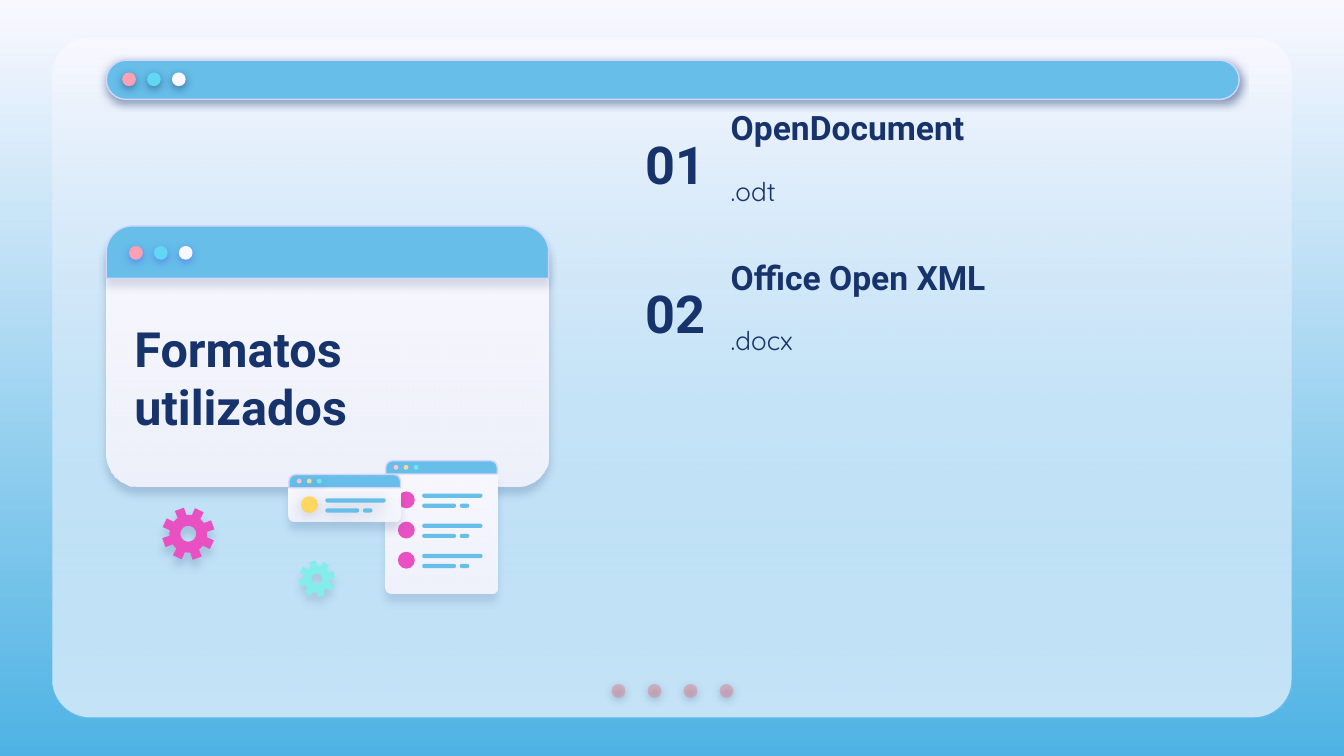
"""Build the slide on the file formats in use, with its window and gear drawings."""
import math

from pptx import Presentation, util as u
from pptx.dml import color
from pptx.enum import shapes, text
from pptx.oxml import ns, xmlchemy
from lxml import etree

NAVY, SKY, MIST, LILAC = "17336B", "66BEE9", "F9F8FF", "D2D6FF"
OVAL, ROUND, HEAD = (shapes.MSO_SHAPE.OVAL, shapes.MSO_SHAPE.ROUNDED_RECTANGLE,
                     shapes.MSO_SHAPE.ROUND_2_SAME_RECTANGLE)
LIGHTS = ("FDA0B4", "60D8F4", MIST)


def rgb(code):
    return color.RGBColor.from_string(code)


def finish(shape, fill, adjust=(), alpha=100, line=None, shadow=None):
    for index, value in enumerate(adjust):
        shape.adjustments[index] = value
    if isinstance(fill, tuple):
        shape.fill.gradient()
        shape.fill.gradient_angle = 270
        for stop, code in zip(shape.fill.gradient_stops, fill):
            stop.color.rgb = rgb(code)
    else:
        shape.fill.solid()
        shape.fill.fore_color.rgb = rgb(fill)
    properties = shape.element.spPr
    if alpha < 100:
        last = list(properties.iter(ns.qn("a:srgbClr")))[-1]
        etree.SubElement(last, ns.qn("a:alpha"), val=str(alpha * 1000))
    if line:
        shape.line.color.rgb = rgb(line)
        shape.line.width = u.Pt(0.75)
    else:
        shape.line.fill.background()
    shape.shadow.inherit = False
    if shadow:
        code, strength, blur, distance = shadow
        effects = properties.find(ns.qn("a:effectLst"))
        outer = etree.SubElement(effects, ns.qn("a:outerShdw"), blurRad=str(u.Pt(blur)),
                                 dist=str(u.Pt(distance)), dir="5400000",
                                 algn="bl", rotWithShape="0")
        tint = etree.SubElement(outer, ns.qn("a:srgbClr"), val=code)
        etree.SubElement(tint, ns.qn("a:alpha"), val=str(strength * 1000))


deck = Presentation()
deck.slide_width, deck.slide_height = u.Cm(25.4), u.Cm(14.29)
page = deck.slides.add_slide(deck.slide_layouts[4])
add = page.shapes.add_shape
page.background.fill.gradient()
page.background.fill.gradient_angle = 270
for stop, code in zip(page.background.fill.gradient_stops, (MIST, "4EB3E4")):
    stop.color.rgb = rgb(code)

glow = (NAVY, 50, 4.5, 1.5)
panel = [u.Cm(n) for n in (0.99, 0.71, 23.42, 12.85)]
finish(add(ROUND, *panel), MIST, [0.056])
finish(add(ROUND, *panel), (MIST, SKY), [0.056], 35)
for step in range(4):
    dot = add(OVAL, u.Cm(11.56 + 0.68 * step), u.Cm(12.93), u.Cm(0.26), u.Cm(0.26))
    finish(dot, "E27B83", alpha=44, shadow=glow)

bar = add(ROUND, u.Cm(2.01), u.Cm(1.14), u.Cm(21.41), u.Cm(0.74))
finish(bar, SKY, [0.5], line=LILAC, shadow=glow)
card = add(ROUND, u.Cm(2.01), u.Cm(4.27), u.Cm(8.36), u.Cm(4.93))
finish(card, (MIST, MIST), [0.124], 87, shadow=(NAVY, 22, 4.5, 3.8))
card_head = add(HEAD, u.Cm(2.01), u.Cm(4.27), u.Cm(8.36), u.Cm(0.99))
finish(card_head, SKY, [0.5, 0], line=LILAC, shadow=(NAVY, 15, 4.5, 3.8))
for left, top, tone in ((2.31, 1.37, NAVY), (2.44, 4.65, "5352EE")):
    for step, code in enumerate(LIGHTS):
        light = add(OVAL, u.Cm(left + 0.47 * step), u.Cm(top), u.Cm(0.26), u.Cm(0.26))
        finish(light, code, shadow=(tone, 50, 4.5, 1.5))

holders = list(page.placeholders)
texts = [(holders[0], "Formatos utilizados", (2.29, 5.66, 7.87, 2.95), 26, "Roboto", "LEFT", 0)]
formats = (("01", "OpenDocument", ".odt"), ("02", "Office Open XML", ".docx"))
for row, (number, name, ending) in enumerate(formats):
    top = 1.9 + 2.82 * row
    label = page.shapes.add_textbox(0, 0, 0, 0)
    texts += [
        (label, number, (10.85, top, 2.74, 2.39), 28, "Roboto", "RIGHT", 0),
        (holders[1 + 2 * row], name, (13.56, top, 9.4, 1.02), 18, "Roboto", "LEFT", 0),
        (holders[2 + 2 * row], ending, (13.56, top + 1.03, 9.4, 1.37), 14, "Quicksand", "LEFT", 12),
    ]
for box, words, place, size, font, align, after in texts:
    box.element.getparent().append(box.element)
    for name, value in zip(("left", "top", "width", "height"), place):
        setattr(box, name, u.Cm(value))
    frame = box.text_frame
    frame.text = words
    frame_format = {"word_wrap": True, "auto_size": text.MSO_AUTO_SIZE.NONE,
                    "vertical_anchor": text.MSO_ANCHOR.MIDDLE}
    frame_format.update({f"margin_{side}": u.Cm(0.25)
                         for side in ("left", "top", "right", "bottom")})
    for name, value in frame_format.items():
        setattr(frame, name, value)
    para = frame.paragraphs[0]
    para_format = {"alignment": getattr(text.PP_ALIGN, align), "line_spacing": 1.0,
                   "space_before": u.Pt(0), "space_after": u.Pt(after)}
    for name, value in para_format.items():
        setattr(para, name, value)
    settings = para.runs[0].font
    for name, value in {"size": u.Pt(size), "name": font, "bold": font == "Roboto"}.items():
        setattr(settings, name, value)
    settings.color.rgb = rgb(NAVY)
    bullets = para._p.get_or_add_pPr()
    bullets.set("marL", "0")
    bullets.set("indent", "0")
    etree.SubElement(bullets, ns.qn("a:buNone"))

windows = (
    (7.29, 8.71, 2.26, 3, 0.58, "E951C2", 15, None, None),
    (5.46, 8.97, 0.64, 1, 0.41, "FFD65F", 16, (NAVY, 17, 4.5, 2.2), (NAVY, 18, 6.8, 1.5)),
)
for left, top, height, rows, first, mark, strength, light_shadow, row_shadow in windows:
    sheet = add(HEAD, u.Cm(left), u.Cm(top + 0.25), u.Cm(2.11), u.Cm(height))
    finish(sheet, (MIST, MIST), [0, 0.13 / min(2.11, height)], 87,
           shadow=(NAVY, strength, 4.5, 4.5))
    header = add(HEAD, u.Cm(left), u.Cm(top), u.Cm(2.11), u.Cm(0.25))
    finish(header, SKY, [0.5, 0], line=LILAC)
    for step, code in enumerate(("FFC3D0", "F5D79B", "6AEBE7")):
        light = add(OVAL, u.Cm(left + 0.15 + 0.19 * step), u.Cm(top + 0.08),
                    u.Cm(0.09), u.Cm(0.09))
        finish(light, code, shadow=light_shadow)
    for row in range(rows):
        line_top = top + first + 0.57 * row
        disc = add(OVAL, u.Cm(left + 0.23), u.Cm(line_top), u.Cm(0.32), u.Cm(0.32))
        finish(disc, mark, shadow=row_shadow)
        for shift, drop, width in ((0.69, 0.04, 1.14), (0.69, 0.23, 0.64), (1.4, 0.23, 0.18)):
            stroke = add(ROUND, u.Cm(left + shift), u.Cm(line_top + drop),
                         u.Cm(width), u.Cm(0.08))
            finish(stroke, SKY, [0.5], shadow=row_shadow)

gears = ((3.56, 10.09, 1, 25, "E951C2", (NAVY, 16, 4.5, 4.5)),
         (5.99, 10.94, 0.69, 31, "81EEEB", (NAVY, 15, 4.5, 3.8)))
tooth = ((-14, 0.36), (-10.5, 0.5), (10.5, 0.5), (14, 0.36))
for x, y, scale, turn, code, shadow in gears:
    rim = [(turn + 45 * step + angle, radius) for step in range(8) for angle, radius in tooth]
    hole = [(-15 * step, 0.15) for step in range(24)]
    rim, hole = [[(u.Cm(x + scale * radius * math.cos(math.radians(angle))),
                   u.Cm(y + scale * radius * math.sin(math.radians(angle))))
                  for angle, radius in ring] for ring in (rim, hole)]
    outline = page.shapes.build_freeform(*rim[0])
    outline.add_line_segments(rim[1:])
    outline.move_to(*hole[0])
    outline.add_line_segments(hole[1:])
    finish(outline.convert_to_shape(), code, shadow=shadow)

deck.save("out.pptx")
